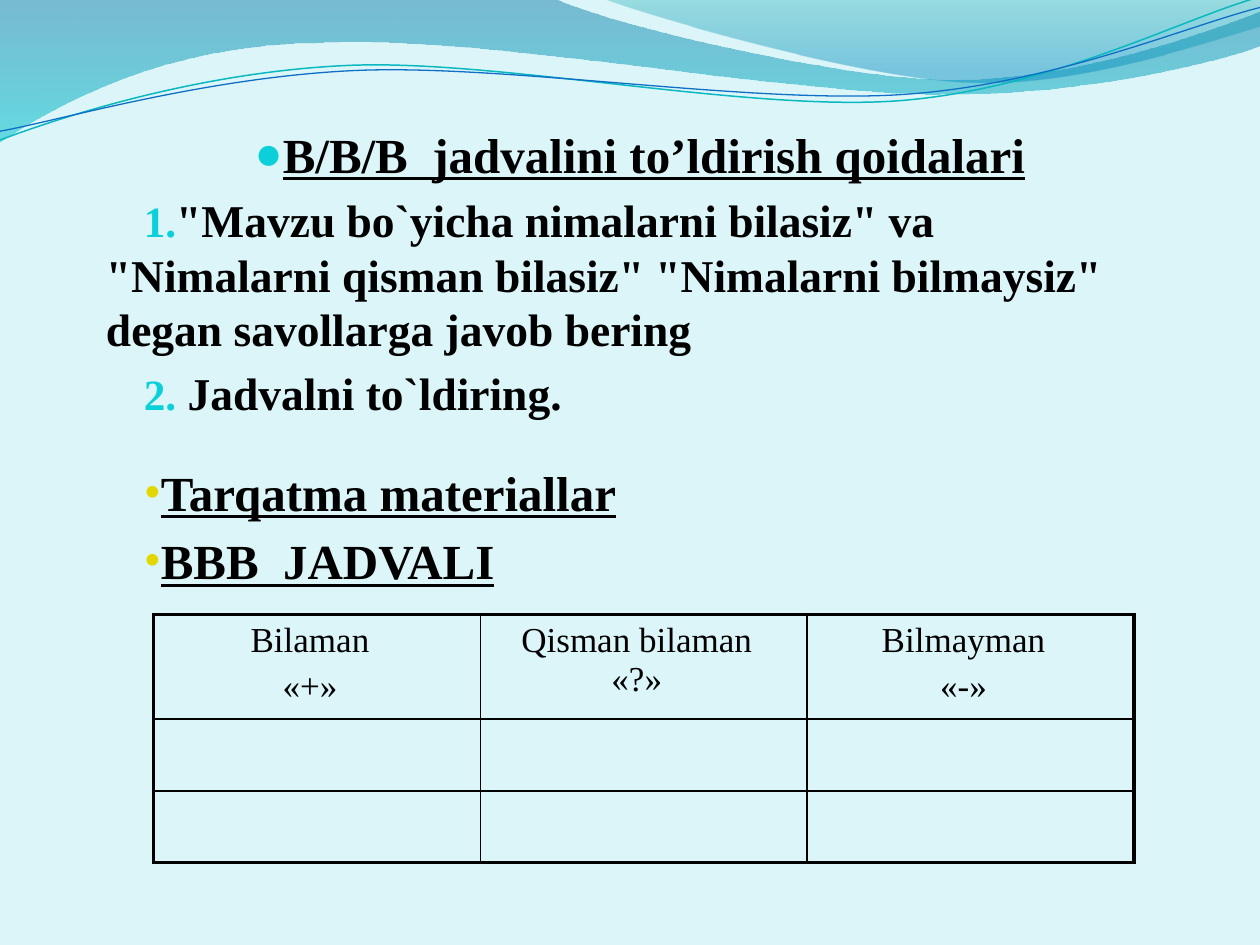
from lxml.etree import SubElement
from pptx import Presentation
from pptx.dml.color import RGBColor
from pptx.enum.text import PP_ALIGN
from pptx.oxml.ns import qn
from pptx.util import Pt

COLORS = {
    "bg": "DBF5F9", "text": "000000", "bullet": "0BD0D9", "accent": "E2D700",
    "blue": "0074A1", "cyan": "00C6CF", "teal": "00A1A9", "sky": "008BBF",
    "line_teal": "0AB8BF", "line_blue": "0F6FC6",
}
FONT = "Times New Roman"


def rgb(name):
    return RGBColor.from_string(COLORS[name])


def add_text(p, text, size=28, bold=True, underline=False, align=PP_ALIGN.LEFT,
             bullet=None, bullet_color="bullet", bullet_size=100):
    """Fill a paragraph; bullet is a character, or "1." for numbering."""
    p.alignment = align
    p.space_before = Pt(size * 0.2)
    r = p.add_run()
    r.text = text
    font = r.font
    font.name, font.size, font.bold, font.underline = FONT, Pt(size), bold, underline
    font.color.rgb = rgb("text")
    if bullet:
        pPr = p._p.get_or_add_pPr()
        pPr.set("marL", str(Pt(13.5)))
        pPr.set("indent", str(Pt(21.6)))
        clr = SubElement(pPr, qn("a:buClr"))
        SubElement(clr, qn("a:srgbClr"), val=COLORS[bullet_color])
        SubElement(pPr, qn("a:buSzPct"), val=str(bullet_size * 1000))
        SubElement(pPr, qn("a:buFont"), typeface=FONT)
        if bullet == "1.":
            SubElement(pPr, qn("a:buAutoNum"), type="arabicPeriod")
        else:
            SubElement(pPr, qn("a:buChar"), char=bullet)


class SlideBuilder:
    def __init__(self, slide):
        self.slide = slide
        fill = slide.background.fill
        fill.solid()
        fill.fore_color.rgb = rgb("bg")

    def curve(self, start, segments, closed):
        """Freeform of lines (one point) and Bezier curves (three points)."""
        fb = self.slide.shapes.build_freeform(Pt(start[0]), Pt(start[1]))
        fb.add_line_segments([(Pt(x), Pt(y)) for seg in segments for x, y in seg],
                             close=closed)
        sp = fb.convert_to_shape()
        sp.shadow.inherit = False
        # Join each three control points into one Bezier element
        lines = iter(list(sp._element.spPr.iter(qn("a:lnTo"))))
        for seg in segments:
            nodes = [next(lines) for _ in seg]
            if len(nodes) == 3:
                nodes[0].tag = qn("a:cubicBezTo")
                for node in nodes[1:]:
                    nodes[0].append(node[0])
                    node.getparent().remove(node)
        return sp

    def wave(self, start, segments, stops):
        """Closed shape with a vertical gradient of (position, colour, opacity)."""
        sp = self.curve(start, segments, True)
        sp.line.fill.background()
        sp.fill.gradient()
        sp.fill.gradient_angle = 270
        for stop, (position, color, _) in zip(sp.fill.gradient_stops, stops):
            stop.position = position
            stop.color.rgb = rgb(color)
        for clr, (_, _, opacity) in zip(sp._element.spPr.iter(qn("a:srgbClr")), stops):
            SubElement(clr, qn("a:alpha"), val=str(opacity * 1000))

    def stroke(self, start, segments, color, width):
        sp = self.curve(start, segments, False)
        sp.fill.background()
        sp.line.color.rgb = rgb(color)
        sp.line.width = Pt(width)

    def text(self, x, y, w, h, paragraphs):
        tf = self.slide.shapes.add_textbox(Pt(x), Pt(y), Pt(w), Pt(h)).text_frame
        tf.word_wrap = True
        for i, (text, style) in enumerate(paragraphs):
            p = tf.add_paragraph() if i else tf.paragraphs[0]
            add_text(p, text, **style)

    def table(self, x, y, w, row_heights, headers):
        rows, cols = len(row_heights), len(headers)
        table = self.slide.shapes.add_table(
            rows, cols, Pt(x), Pt(y), Pt(w), Pt(sum(row_heights))).table
        table.first_row = table.horz_banding = False
        for row, height in zip(table.rows, row_heights):
            row.height = Pt(height)
        for c, lines in enumerate(headers):
            cell = table.cell(0, c)
            cell.margin_left, cell.margin_right = Pt(12), Pt(20)
            for i, line in enumerate(lines):
                p = cell.text_frame.add_paragraph() if i else cell.text_frame.paragraphs[0]
                add_text(p, line, size=20, bold=False, align=PP_ALIGN.CENTER)
        # Thick outer frame, thin inner lines
        for r in range(rows):
            for c in range(cols):
                cell = table.cell(r, c)
                outer = {"L": c == 0, "R": c == cols - 1, "T": r == 0, "B": r == rows - 1}
                for side, thick in outer.items():
                    ln = SubElement(cell._tc.get_or_add_tcPr(), qn(f"a:ln{side}"),
                                    w=str(Pt(2.25 if thick else 1)))
                    solid = SubElement(ln, qn("a:solidFill"))
                    SubElement(solid, qn("a:srgbClr"), val=COLORS["text"])
                cell.fill.background()


def main():
    prs = Presentation()
    prs.slide_width, prs.slide_height = Pt(720), Pt(540)
    s = SlideBuilder(prs.slides.add_slide(prs.slide_layouts[6]))

    # Waves along the top
    s.wave((0, -0.7), [
        [(317, -0.7)],
        [(342.7, 12.2), (478, 45.4), (545.8, 45.4)],
        [(614.2, 45.4), (689.8, 18.7), (720, 6.5)],
        [(720.7, 26)],
        [(707.8, 31.7), (626.4, 54.7), (537, 54)],
        [(447.8, 54), (275, 20.2), (185, 24.5)],
        [(93, 25.2), (33, 59.8), (-0.7, 81.4)],
    ], [(0, "blue", 45), (1, "cyan", 55)])
    s.wave((345, -0.7), [
        [(366.5, 8), (491, 44.6), (553.7, 46.8)],
        [(616.3, 49.7), (692, 23), (720, 15)],
        [(720, 0)],
    ], [(0, "teal", 30), (0.8, "sky", 45)])

    # Thin curves
    s.stroke((0, 80), [
        [(34.6, 67), (113.8, 41), (199.4, 37.4)],
        [(284.4, 33.8), (427, 64), (513.4, 57.6)],
        [(599.8, 51), (675.4, 10.8), (718.6, -1.4)],
    ], "line_teal", 0.85)
    s.stroke((0, 75), [
        [(33.8, 69), (118, 44), (203.8, 40.3)],
        [(290.2, 36.7), (429.8, 59.8), (516.2, 54)],
        [(602, 48.2), (677.5, 15), (720, 4.3)],
    ], "line_blue", 0.75)

    # Rules
    numbered = dict(size=26, bullet="1.", bullet_size=95)
    s.text(40, 67.5, 616.3, 188.6, [
        ("B/B/B  jadvalini to’ldirish qoidalari",
         dict(underline=True, align=PP_ALIGN.CENTER, bullet="●", bullet_size=95)),
        ("\"Mavzu bo`yicha nimalarni bilasiz\" va \"Nimalarni qisman bilasiz\" "
         "\"Nimalarni bilmaysiz\" degan savollarga javob bering", numbered),
        (" Jadvalni to`ldiring.", numbered),
    ])

    # Table to fill in
    s.table(87.8, 351.2, 560.2, [59.8, 41, 41], [
        ["Bilaman", "«+»"], ["Qisman bilaman «?»"], ["Bilmayman", "«-»"],
    ])

    # Handout headings
    heading = dict(underline=True, bullet="•", bullet_color="accent")
    s.text(40, 260.6, 648, 238.3, [
        ("Tarqatma materiallar", heading), ("BBB  JADVALI", heading),
    ])
    prs.save("out.pptx")


if __name__ == "__main__":
    main()
